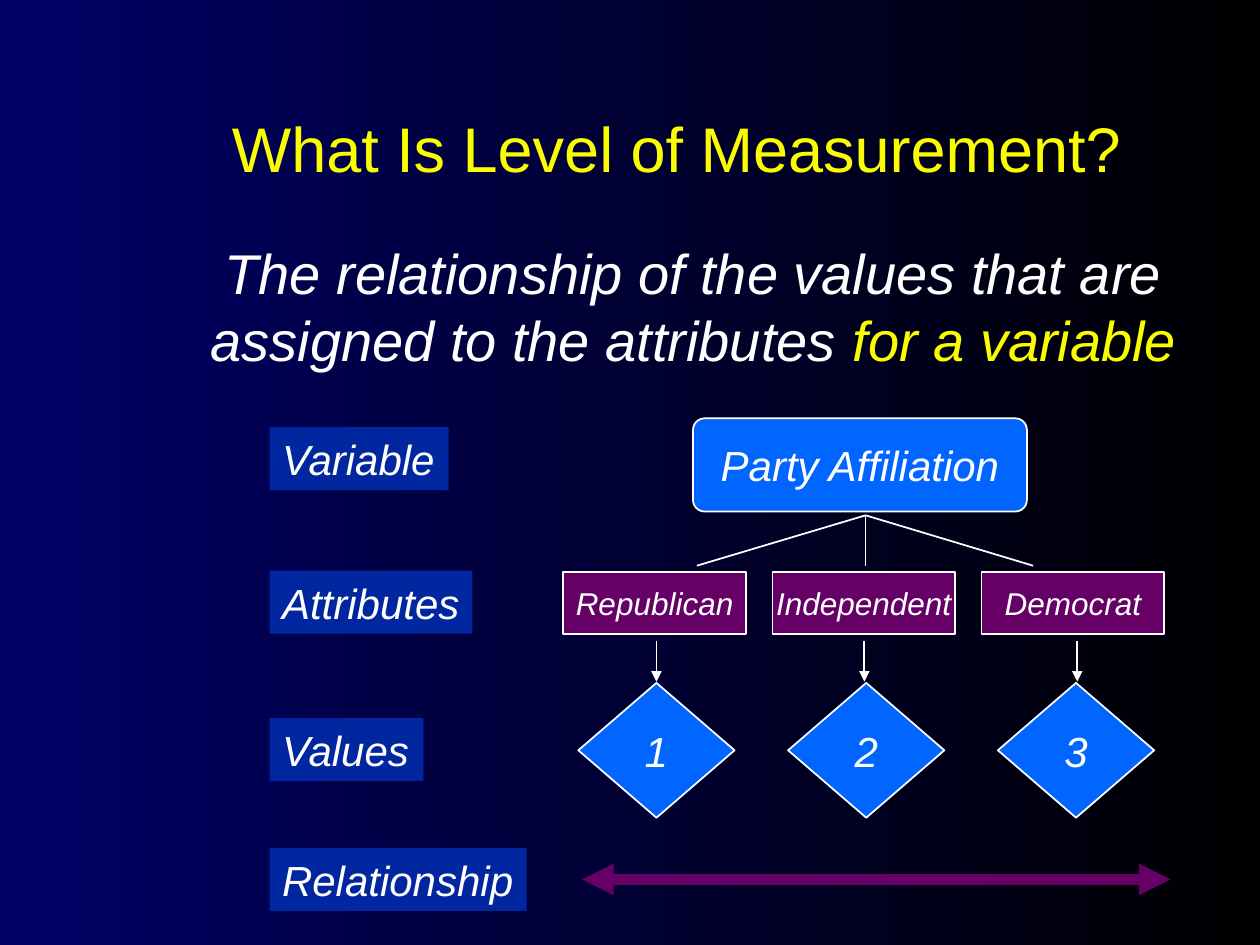
"""Builds a slide that explains level of measurement."""
from lxml import etree
from pptx import Presentation
from pptx.dml.color import RGBColor
from pptx.enum.shapes import MSO_CONNECTOR, MSO_SHAPE
from pptx.enum.text import MSO_ANCHOR, PP_ALIGN
from pptx.oxml.ns import qn
from pptx.util import Inches, Pt

LINE = MSO_CONNECTOR.STRAIGHT
RECT = MSO_SHAPE.RECTANGLE
ROUND = MSO_SHAPE.ROUNDED_RECTANGLE
DIAMOND = MSO_SHAPE.DIAMOND
LEFT, CENTER = PP_ALIGN.LEFT, PP_ALIGN.CENTER
MIDDLE, BOTTOM = MSO_ANCHOR.MIDDLE, MSO_ANCHOR.BOTTOM

WHITE = RGBColor(0xFF, 0xFF, 0xFF)
BLACK = RGBColor(0x00, 0x00, 0x00)
YELLOW = RGBColor(0xFA, 0xFD, 0x00)
NAVY = RGBColor(0x00, 0x00, 0x66)
LABEL = RGBColor(0x00, 0x27, 0x9F)
BLUE = RGBColor(0x00, 0x66, 0xFF)
PURPLE = RGBColor(0x66, 0x00, 0x66)

prs = Presentation()
prs.slide_width, prs.slide_height = Inches(10), Inches(7.5)
slide = prs.slides.add_slide(prs.slide_layouts[5])
shapes = slide.shapes


def add_box(kind, place, text, fill, size=24, edge=WHITE, align=CENTER):
    box = shapes.add_shape(kind, *[Inches(n) for n in place])
    box.shadow.inherit = False
    box.fill.solid()
    box.fill.fore_color.rgb = fill
    if edge is None:
        box.line.fill.background()
    else:
        box.line.color.rgb = edge
        box.line.width = Pt(1)
    frame = box.text_frame
    frame.word_wrap = False
    frame.vertical_anchor = MIDDLE
    frame.text = text
    para = frame.paragraphs[0]
    para.alignment = align
    font = para.runs[0].font
    font.name, font.size, font.italic = "Arial", Pt(size), True
    font.color.rgb = WHITE
    return box


def add_line(start, end, color=WHITE, width=1, ends=()):
    line = shapes.add_connector(LINE, *[Inches(n) for n in start + end])
    line.line.color.rgb = color
    line.line.width = Pt(width)
    for tag in ends:
        etree.SubElement(line.line._get_or_add_ln(), qn(tag), type="triangle")
    etree.SubElement(line._element.spPr, qn("a:effectLst"))


back = slide.background.fill
back.gradient()
back.gradient_angle = 0
for stop, color in zip(back.gradient_stops, (NAVY, BLACK)):
    stop.color.rgb = color

title = shapes.title
title.left, title.top = Inches(0.83), Inches(0.25)
title.width, title.height = Inches(9.08), Inches(1.27)
title.text_frame.text = "What Is Level of Measurement?"
title.text_frame.vertical_anchor = BOTTOM
head = title.text_frame.paragraphs[0]
head.alignment = CENTER
font = head.runs[0].font
font.name, font.size = "Arial", Pt(36)
font.color.rgb = YELLOW

claim = shapes.add_textbox(Inches(1.09), Inches(1.84), Inches(8.83), Inches(1.16))
claim.text_frame.word_wrap = True
para = claim.text_frame.paragraphs[0]
para.alignment = CENTER
for text, color in (
    ("The relationship of the values that are assigned to the attributes ", WHITE),
    ("for a variable", YELLOW),
):
    run = para.add_run()
    run.text = text
    run.font.name, run.font.size, run.font.italic = "Arial", Pt(32), True
    run.font.color.rgb = color

for text, top, width in (
    ("Variable", 3.39, 1.42),
    ("Attributes", 4.53, 1.61),
    ("Values", 5.7, 1.22),
    ("Relationship", 6.73, 2.04),
):
    add_box(RECT, (2.14, top, width, 0.5), text, LABEL, edge=None, align=LEFT)

party = add_box(ROUND, (5.5, 3.32, 2.65, 0.74), "Party Affiliation", BLUE)
party.adjustments[0] = 0.125

columns = (("Republican", 5.53, 5.21), ("Independent", 6.87, 6.86), ("Democrat", 8.2, 8.55))
for i, (name, branch, drop) in enumerate(columns):
    add_line((6.87, 4.09), (branch, 4.49))
    add_box(RECT, (4.47 + 1.66 * i, 4.54, 1.45, 0.49), name, PURPLE, size=18)
    add_line((drop, 5.09), (drop, 5.41), ends=("a:tailEnd",))
    add_box(DIAMOND, (4.59 + 1.665 * i, 5.42, 1.24, 1.07), str(i + 1), BLUE)

add_line((4.62, 6.98), (9.29, 6.98), PURPLE, 6, ("a:headEnd", "a:tailEnd"))

prs.save("out.pptx")
